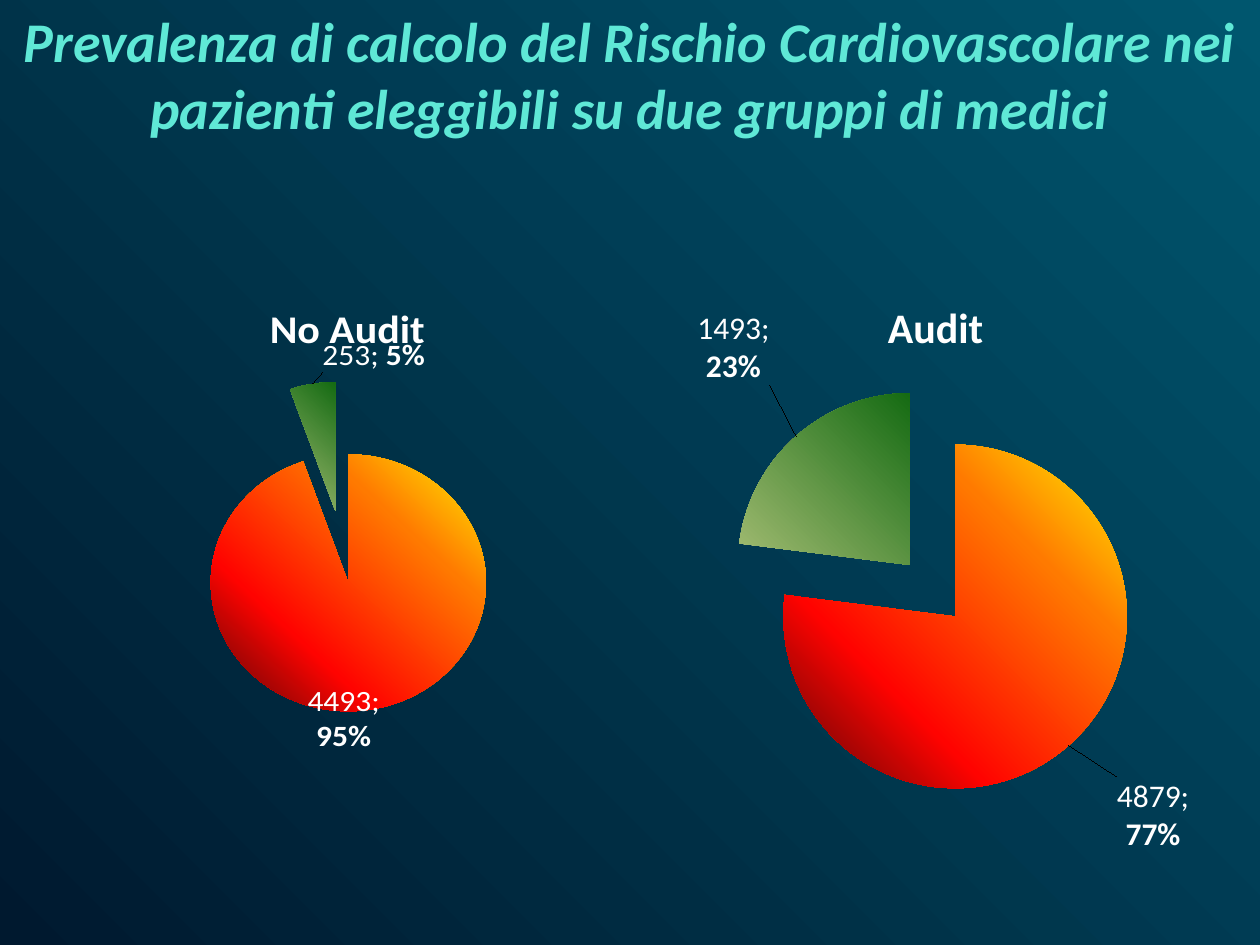
import pptx
import pptx.chart.data
import pptx.dml.color
import pptx.enum.chart
import pptx.enum.text
import pptx.oxml
import pptx.oxml.ns
import pptx.util
from pptx.util import Inches

THEME = {
    "font": "Calibri", "title": "5FE8D6", "text": "FFFFFF",
    "title_size": 32, "head_size": 24, "label_size": 18, "base_size": 10,
    "back": ([(0, "00566E"), (100, "00192F")], 135),
    "fire": ([(0, "FFF200"), (29, "FF7A00"), (70, "FF0300"), (100, "4D0808")], 135),
    "leaf": ([(0, "DDEBCF"), (5, "9CB86E"), (100, "156B13")], 315),
}
TITLE = ("Prevalenza di calcolo del Rischio Cardiovascolare nei "
         "pazienti eleggibili su due gruppi di medici")
FILLS = ["fire", "leaf"]
# box and plot: left, top, width, height; at: head's left, top
# burst: explosion of each slice; shifts: label offsets
PIES = [
    {"head": "No Audit", "box": (0.62, 2.27, 4.3, 3.98), "vals": (4493, 253),
     "labels": [("4493; ", "95%"), ("253; ", "5%")], "burst": (33, 24),
     "plot": (0.07, 0.18, 0.83, 0.73), "at": (0.34, 0.02),
     "shifts": [(-0.12, 0), (0.21, -0.01)], "value": True},
    {"head": "Audit", "box": (5.31, 1.64, 4.3, 5.16), "vals": (77, 23),
     "labels": [("4879; ", "77%"), ("1493; ", "23%")], "burst": (23, 17),
     "plot": (0.09, 0.25, 0.78, 0.67), "at": (0.39, 0.13),
     "shifts": [(0.08, 0.04), (-0.04, -0.07)], "value": False},
]


def node(tag, **attrs):
    item = pptx.oxml.parse_xml(f"<{tag} {pptx.oxml.ns.nsdecls('a', 'c')}/>")
    for key, val in attrs.items():
        item.set(key, str(val))
    return item


def shade(fill, root, name):
    """Give fill the theme gradient; root is the element that holds it."""
    stops, angle = THEME[name]
    fill.gradient()
    fill.gradient_angle = 360 - angle
    rows = root.xpath(".//a:gsLst")[0]
    for old in list(rows):
        rows.remove(old)
    for pos, color in stops:
        stop = node("a:gs", pos=pos * 1000)
        stop.append(node("a:srgbClr", val=color))
        rows.append(stop)


def style(font, size, color="text", bold=False):
    font.name = THEME["font"]
    font.size = pptx.util.Pt(size)
    font.bold = bold
    font.color.rgb = pptx.dml.color.RGBColor.from_string(THEME[color])


def place(prior, spot, edge=True, inner=False):
    """Put a manual layout after prior, in place of any there."""
    for old in prior.getparent().xpath("c:layout"):
        old.getparent().remove(old)
    outer, hand = node("c:layout"), node("c:manualLayout")
    outer.append(hand)
    if inner:
        hand.append(node("c:layoutTarget", val="inner"))
    if edge:
        for tag in ("c:xMode", "c:yMode"):
            hand.append(node(tag, val="edge"))
    for tag, val in zip("xywh", spot):
        hand.append(node("c:" + tag, val=val))
    prior.addnext(outer)


def add_label(point, parts, value):
    label = point.data_label
    para = label.text_frame.paragraphs[0]
    for text, bold in zip(parts, (False, True)):
        run = para.add_run()
        run.text = text
        style(run.font, THEME["label_size"], bold=bold)
    label.position = pptx.enum.chart.XL_LABEL_POSITION.OUTSIDE_END


def add_pie(slide, pie):
    data = pptx.chart.data.CategoryChartData(number_format="0")
    data.categories = ["1", "2"]
    data.add_series("Series 1", pie["vals"])
    chart = slide.shapes.add_chart(
        pptx.enum.chart.XL_CHART_TYPE.PIE, *map(Inches, pie["box"]), data).chart
    style(chart.font, THEME["base_size"])
    chart.has_legend = False
    chart.has_title = True
    run = chart.chart_title.text_frame.paragraphs[0].add_run()
    run.text = pie["head"]
    style(run.font, THEME["head_size"], bold=True)
    place(chart.chart_title._element.xpath("c:tx")[0], pie["at"])
    area = chart._chartSpace.xpath(".//c:plotArea")[0]
    for old in area.xpath("c:layout"):
        area.remove(old)
    first = area[0]
    place(first, pie["plot"], inner=True)
    area.insert(0, area.xpath("c:layout")[0])

    plot = chart.plots[0]
    plot.vary_by_categories = True
    series = plot.series[0]
    root = series._element
    labels = series.data_labels
    labels.show_value = pie["value"]
    labels.show_percentage = True
    style(labels.font, THEME["label_size"])
    for i, name in enumerate(FILLS):
        point = series.points[i]
        fill = point.format.fill
        slice_ = root.xpath("c:dPt")[i]
        shade(fill, slice_, name)
        point.format.line.fill.background()
        slice_.xpath("c:spPr")[0].addprevious(
            node("c:explosion", val=pie["burst"][i]))
        add_label(point, pie["labels"][i], pie["value"])
        mark = root.xpath("c:dLbls/c:dLbl")[i]
        place(mark.xpath("c:idx")[0], pie["shifts"][i], edge=False)
        mark.xpath("c:showVal")[0].set("val", str(int(pie["value"])))
        mark.xpath("c:showPercent")[0].set("val", "1")
    root.xpath("c:dPt")[0].addprevious(
        node("c:explosion", val=pie["burst"][0]))


def main():
    deck = pptx.Presentation()
    deck.slide_width, deck.slide_height = Inches(10), Inches(7.5)
    slide = deck.slides.add_slide(deck.slide_layouts[5])
    shade(slide.background.fill, slide._element.cSld, "back")
    title = slide.shapes.title
    title.left, title.top, title.width, title.height = map(
        Inches, (0, 0, 10, 1.18))
    frame = title.text_frame
    frame.word_wrap = True
    frame.vertical_anchor = pptx.enum.text.MSO_ANCHOR.TOP
    para = frame.paragraphs[0]
    para.alignment = pptx.enum.text.PP_ALIGN.CENTER
    run = para.add_run()
    run.text = TITLE
    style(run.font, THEME["title_size"], "title", bold=True)
    run.font.italic = True
    for pie in PIES:
        add_pie(slide, pie)
    deck.save("out.pptx")


if __name__ == "__main__":
    main()
